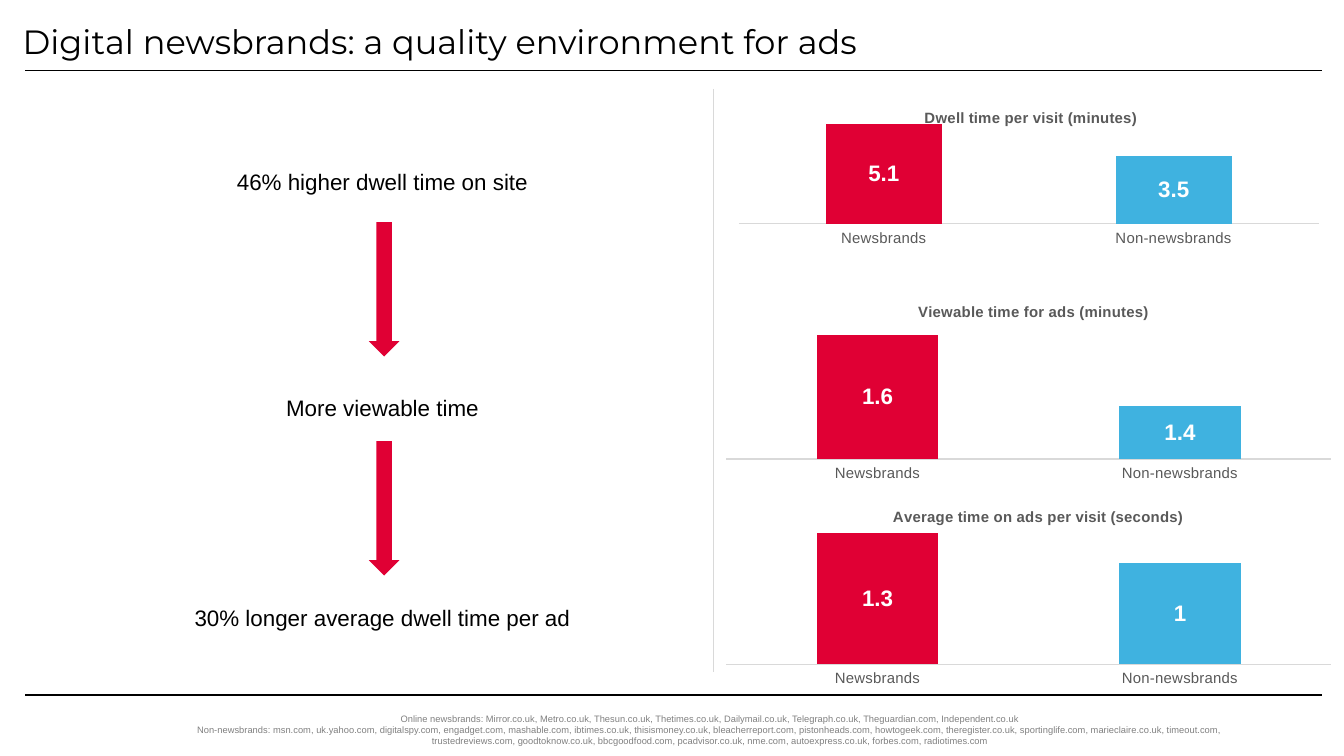
from dataclasses import dataclass

from pptx import Presentation
from pptx.chart.data import CategoryChartData
from pptx.dml.color import RGBColor
from pptx.enum.chart import XL_CHART_TYPE as ChartType, XL_LABEL_POSITION as LabelPos
from pptx.enum.chart import XL_TICK_MARK as TickMark
from pptx.enum.shapes import MSO_CONNECTOR as Connector, MSO_SHAPE as Shape
from pptx.enum.text import MSO_ANCHOR as Anchor, PP_ALIGN as Align
from pptx.oxml import parse_xml
from pptx.oxml.ns import nsdecls, qn
from pptx.util import Cm, Pt


@dataclass(frozen=True)
class Theme:
    """Colours, fonts and type sizes of the slide."""
    black: str = "000000"
    white: str = "FFFFFF"
    red: str = "E00034"
    blue: str = "3FB2E0"
    rule: str = "D9D9D9"
    label: str = "595959"
    note: str = "808080"
    heading_font: str = "Montserrat"
    body_font: str = "Arial"
    heading: int = 18
    body: int = 12
    small: int = 8
    tiny: int = 5


THEME = Theme()

HEADING = "Digital newsbrands: a quality environment for ads"
STEPS = [
    ("46% higher dwell time on site", 0),
    ("More viewable time", 88),
    ("30% longer average dwell time per ad", 79),
]
SOURCES = (
    "Online newsbrands: Mirror.co.uk, Metro.co.uk, Thesun.co.uk, Thetimes.co.uk, "
    "Dailymail.co.uk, Telegraph.co.uk, Theguardian.com, Independent.co.uk\v"
    "Non-newsbrands: msn.com, uk.yahoo.com, digitalspy.com, engadget.com, mashable.com, "
    "ibtimes.co.uk, thisismoney.co.uk, bleacherreport.com, pistonheads.com, howtogeek.com, "
    "theregister.co.uk, sportinglife.com, marieclaire.co.uk, timeout.com, "
    "trustedreviews.com, goodtoknow.co.uk, bbcgoodfood.com, pcadvisor.co.uk, nme.com, "
    "autoexpress.co.uk, forbes.com, radiotimes.com"
)
CATEGORIES = ["Newsbrands", "Non-newsbrands"]
LOW_PLOT = (0.02, 0.2, 0.96, 0.68)
CHARTS = [
    dict(title="Dwell time per visit (minutes)", values=(5.1, 3.5), scale=(0, 6),
         top=1.73, height=3.25, plot=(0.04, 0.09, 0.92, 0.68), title_at=(0.33, 0.08)),
    dict(title="Viewable time for ads (minutes)", values=(1.6, 1.4), scale=(1.25, 1.65),
         top=5.21, height=3.94, plot=LOW_PLOT, title_at=(0.32, 0.11)),
    dict(title="Average time on ads per visit (seconds)", values=(1.3, 1), scale=(0, 1.4),
         top=9.09, height=3.94, plot=LOW_PLOT, title_at=(0.28, 0.11)),
]
SPLIT = 13.49
RULES = [
    ((0.48, 1.33), (24.99, 1.33), THEME.black, 0.75),
    ((0.48, 13.14), (24.99, 13.14), THEME.black, 0.75),
    ((SPLIT, 1.68), (SPLIT, 12.7), THEME.rule, 0.5),
]
ARROW_TOPS = [5.18, 9.32]


def style(font, size, colour, name=THEME.body_font, bold=False):
    font.name, font.size, font.bold = name, Pt(size), bold
    font.color.rgb = RGBColor.from_string(colour)


def add_rule(page, start, end, colour, weight):
    rule = page.shapes.add_connector(Connector.STRAIGHT, *map(Cm, start + end))
    rule.line.color.rgb = RGBColor.from_string(colour)
    rule.line.width = Pt(weight)
    rule._element.spPr.append(parse_xml(f"<a:effectLst {nsdecls('a')}/>"))


def add_frame(page, *place):
    frame = page.shapes.add_textbox(*map(Cm, place)).text_frame
    frame.word_wrap = True
    return frame


def add_heading(page):
    frame = add_frame(page, 0.18, 0.36, 24.79, 0.99)
    frame.text = HEADING
    para = frame.paragraphs[0]
    para.line_spacing = 0.9
    style(para.runs[0].font, THEME.heading, THEME.black, THEME.heading_font)


def add_sources(page):
    frame = add_frame(page, 3.07, 13.44, 20.73, 0.71)
    frame.margin_top = frame.margin_bottom = 0
    frame.vertical_anchor = Anchor.MIDDLE
    frame.text = SOURCES
    para = frame.paragraphs[0]
    para.alignment = Align.CENTER
    for span in para.runs:
        style(span.font, THEME.tiny, THEME.note)


def add_steps(page):
    frame = add_frame(page, 0, 2.54, SPLIT, 10.8)
    frame.text = "\n".join(text for text, gap in STEPS)
    for para, (text, gap) in zip(frame.paragraphs, STEPS):
        para.alignment = Align.CENTER
        para.line_spacing = 2.0
        para.space_before, para.space_after = Pt(gap), Pt(4.5)
        para._p.get_or_add_pPr().set("marL", str(Cm(0.97)))
        style(para.runs[0].font, THEME.body, THEME.black)


def add_arrow(page, top):
    arrow = page.shapes.add_shape(Shape.RIGHT_ARROW, Cm(5.99), Cm(top), Cm(2.54), Cm(0.58))
    arrow.rotation = 90
    arrow.shadow.inherit = False
    arrow.fill.solid()
    arrow.fill.fore_color.rgb = RGBColor.from_string(THEME.red)
    arrow.line.fill.background()


def set_layout(parent, index, fractions, inner=False):
    for old in parent.findall(qn("c:layout")):
        parent.remove(old)
    target = '<c:layoutTarget val="inner"/>' if inner else ""
    modes = '<c:xMode val="edge"/><c:yMode val="edge"/>'
    sizes = "".join(f'<c:{key} val="{value}"/>' for key, value in zip("xywh", fractions))
    parent.insert(index, parse_xml(
        f"<c:layout {nsdecls('c')}><c:manualLayout>{target}{modes}{sizes}"
        "</c:manualLayout></c:layout>"))


def add_chart(page, title, values, scale, top, height, plot, title_at):
    data = CategoryChartData()
    data.categories = CATEGORIES
    data.add_series("Series 1", (values[0], None))
    data.add_series("Series 2", (None, values[1]))
    chart = page.shapes.add_chart(ChartType.COLUMN_STACKED, Cm(SPLIT), Cm(top),
                                  Cm(11.91), Cm(height), data).chart
    style(chart.font, 10, THEME.black)
    chart.has_legend = False

    heading = chart.chart_title
    heading.text_frame.text = title
    style(heading.text_frame.paragraphs[0].runs[0].font, THEME.small, THEME.label, bold=True)
    heading.include_in_layout = False
    set_layout(heading._element, 1, title_at)
    set_layout(chart._chartSpace.chart.plotArea, 0, plot, inner=True)

    value_axis, category_axis = chart.value_axis, chart.category_axis
    value_axis.minimum_scale, value_axis.maximum_scale = scale
    value_axis.has_major_gridlines = False
    value_axis.visible = False
    category_axis.major_tick_mark = TickMark.NONE
    category_axis.format.line.color.rgb = RGBColor.from_string(THEME.rule)
    category_axis.format.line.width = Pt(0.75)
    style(category_axis.tick_labels.font, THEME.small, THEME.label)

    bars = chart.plots[0]
    bars.gap_width, bars.overlap, bars.vary_by_categories = 150, 100, False
    for series, colour in zip(bars.series, (THEME.red, THEME.blue)):
        series.format.fill.solid()
        series.format.fill.fore_color.rgb = RGBColor.from_string(colour)
        labels = series.data_labels
        labels.show_value = True
        labels.position = LabelPos.CENTER
        style(labels.font, THEME.body, THEME.white, bold=True)


def main():
    """Build the newsbrands slide and save it."""
    deck = Presentation()
    deck.slide_width, deck.slide_height = Cm(25.4), Cm(14.29)
    page = deck.slides.add_slide(deck.slide_layouts[6])
    for rule in RULES:
        add_rule(page, *rule)
    add_heading(page)
    add_sources(page)
    add_steps(page)
    for top in ARROW_TOPS:
        add_arrow(page, top)
    for chart in CHARTS:
        add_chart(page, **chart)
    deck.save("out.pptx")


if __name__ == "__main__":
    main()
